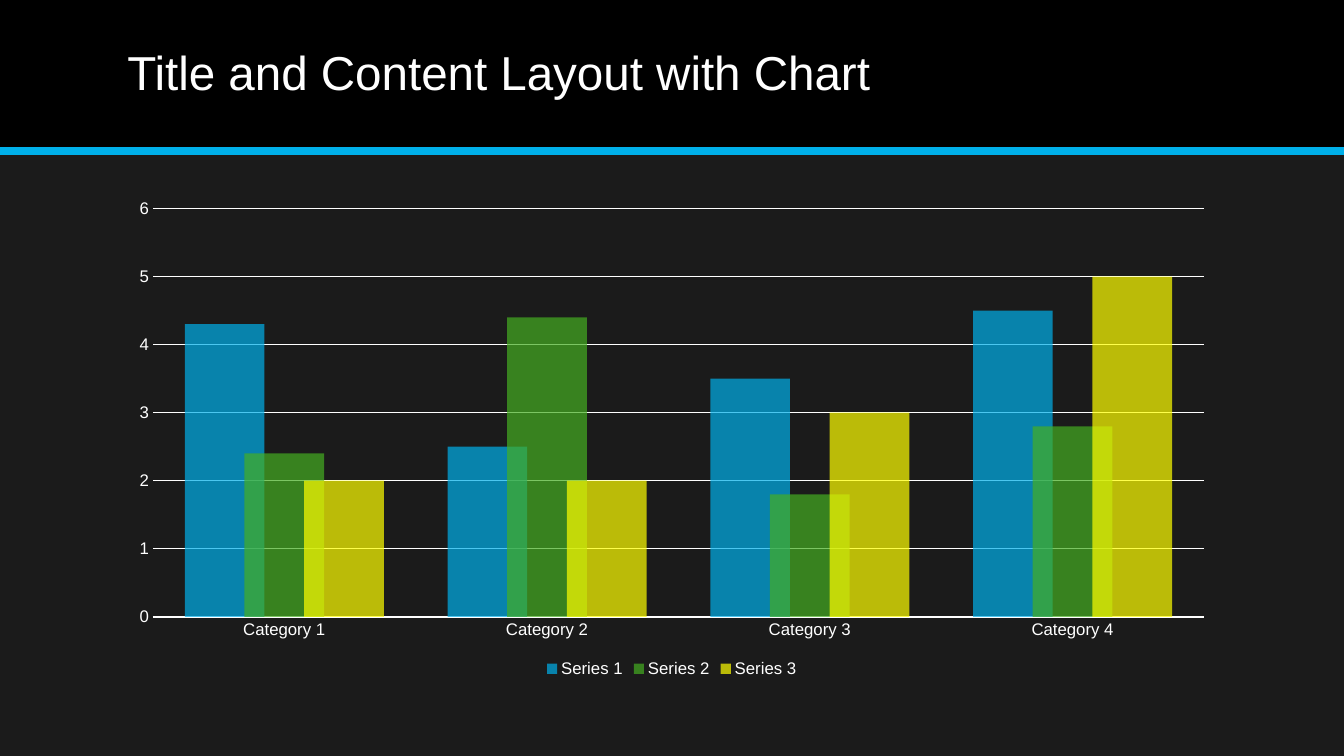
from lxml import etree
from pptx import Presentation
from pptx.chart.data import CategoryChartData
from pptx.dml.color import RGBColor
from pptx.enum.chart import XL_CHART_TYPE, XL_LEGEND_POSITION, XL_TICK_MARK
from pptx.enum.shapes import MSO_CONNECTOR, MSO_SHAPE
from pptx.enum.text import MSO_ANCHOR
from pptx.oxml.ns import qn
from pptx.util import Cm, Pt

COLUMNS = XL_CHART_TYPE.COLUMN_CLUSTERED
BOTTOM = XL_LEGEND_POSITION.BOTTOM
NO_TICK = XL_TICK_MARK.NONE
STRAIGHT = MSO_CONNECTOR.STRAIGHT
RECT = MSO_SHAPE.RECTANGLE
MIDDLE = MSO_ANCHOR.MIDDLE

# Content
TITLE = "Title and Content Layout with Chart"
CATS = ["Category 1", "Category 2", "Category 3", "Category 4"]
SERIES = [
    ("Series 1", (4.3, 2.5, 3.5, 4.5), "00B0EA"),
    ("Series 2", (2.4, 4.4, 1.8, 2.8), "45AE22"),
    ("Series 3", (2, 2, 3, 5), "FFFF00"),
]
FACE, WHITE, BLACK, DARK, BLUE = "Arial", "FFFFFF", "000000", "1B1B1B", "00B0EA"
OPACITY = 70

# Layout in centimetres
WIDE, HIGH = 33.87, 19.05
BAND = 3.81
LEFT, SPAN = 2.96, 27.94
TITLE_TOP, TITLE_HIGH = 0.36, 3.05
CHART_TOP, CHART_HIGH = 4.78, 12.4


def color(target, code):
    target.rgb = RGBColor.from_string(code)


def paint(fill, code):
    fill.solid()
    color(fill.fore_color, code)


def style(font, size):
    for name, value in {"name": FACE, "size": Pt(size), "bold": False}.items():
        setattr(font, name, value)
    color(font.color, WHITE)


def stroke(line, code, width):
    paint(line.fill, code)
    line.width = Pt(width)


def add_band(slide):
    band = slide.shapes.add_shape(RECT, 0, 0, Cm(WIDE), Cm(BAND))
    band.shadow.inherit = False
    paint(band.fill, BLACK)
    band.line.fill.background()
    rule = slide.shapes.add_connector(STRAIGHT, 0, Cm(BAND), Cm(WIDE), Cm(BAND))
    stroke(rule.line, BLUE, 6)
    etree.SubElement(rule.element.spPr, qn("a:effectLst"))


def add_title(slide):
    box = slide.shapes.add_textbox(Cm(LEFT), Cm(TITLE_TOP), Cm(SPAN), Cm(TITLE_HIGH))
    frame = box.text_frame
    frame.word_wrap = True
    frame.vertical_anchor = MIDDLE
    para = frame.paragraphs[0]
    para.line_spacing = 0.9
    run = para.add_run()
    run.text = TITLE
    style(run.font, 34)


def add_bars(slide):
    data = CategoryChartData()
    data.categories = CATS
    for name, values, _ in SERIES:
        data.add_series(name, values)
    chart = slide.shapes.add_chart(
        COLUMNS, Cm(LEFT), Cm(CHART_TOP), Cm(SPAN), Cm(CHART_HIGH), data).chart
    chart.has_title = False
    style(chart.font, 10)

    # Columns
    plot = chart.plots[0]
    for name, value in {"gap_width": 80, "overlap": 25,
                        "vary_by_categories": False}.items():
        setattr(plot, name, value)
    for bar, (_, _, code) in zip(plot.series, SERIES):
        bar.invert_if_negative = False
        paint(bar.format.fill, code)
        tint = bar.format.fill.fore_color
        node = next(bar.format.element.iter(qn("a:srgbClr"))) if hasattr(
            bar.format, "element") else next(
            n for n in bar._element.iter(qn("a:srgbClr")))
        etree.SubElement(node, qn("a:alpha"), val=str(OPACITY * 1000))

    # Axes
    cat, val = chart.category_axis, chart.value_axis
    for axis in (cat, val):
        axis.major_tick_mark = axis.minor_tick_mark = NO_TICK
        style(axis.tick_labels.font, 12)
    stroke(cat.format.line, WHITE, 1.25)
    val.format.line.fill.background()
    val.minimum_scale, val.maximum_scale, val.major_unit = 0, 6, 1
    val.has_major_gridlines = True
    stroke(val.major_gridlines.format.line, WHITE, 0.75)

    # Legend
    chart.has_legend = True
    chart.legend.position = BOTTOM
    chart.legend.include_in_layout = False
    style(chart.legend.font, 12)


def main():
    deck = Presentation()
    deck.slide_width, deck.slide_height = Cm(WIDE), Cm(HIGH)
    slide = deck.slides.add_slide(deck.slide_layouts[6])
    paint(slide.background.fill, DARK)
    add_band(slide)
    add_title(slide)
    add_bars(slide)
    deck.save("out.pptx")


if __name__ == "__main__":
    main()
